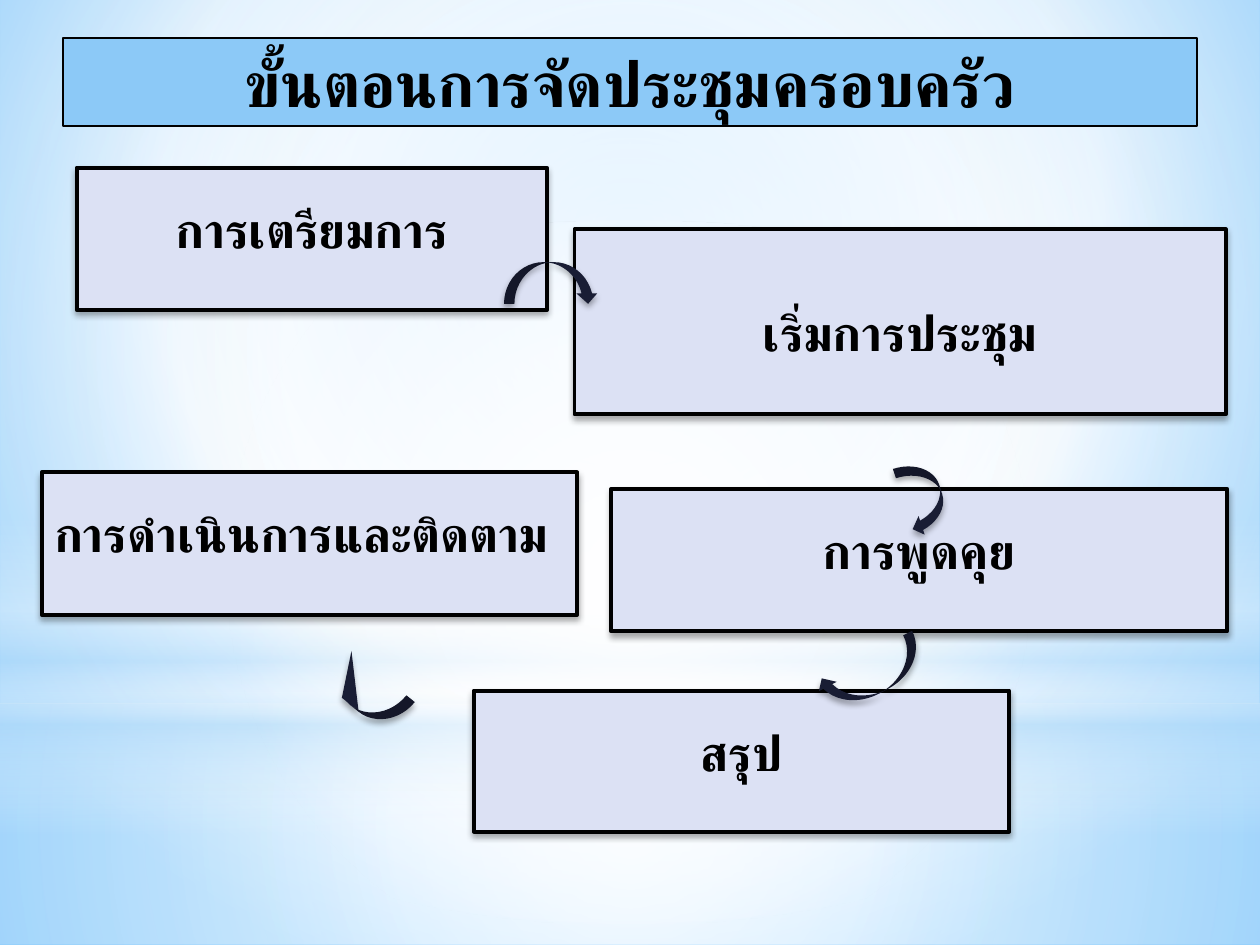
from lxml import etree
from pptx import Presentation
from pptx.dml.color import RGBColor
from pptx.enum.shapes import MSO_SHAPE
from pptx.enum.text import MSO_ANCHOR, PP_ALIGN
from pptx.oxml.ns import qn
from pptx.util import Pt

RECT, OVAL = MSO_SHAPE.RECTANGLE, MSO_SHAPE.OVAL
DOWN, LEFT_ARROW = MSO_SHAPE.CURVED_DOWN_ARROW, MSO_SHAPE.CURVED_LEFT_ARROW
TOP, MIDDLE = MSO_ANCHOR.TOP, MSO_ANCHOR.MIDDLE
CENTER, LEFT = PP_ALIGN.CENTER, PP_ALIGN.LEFT
W, H = 720, 540
LINE = 24
BLACK, WHITE, SKY = "000000", "FFFFFF", "B4DCFA"
TITLE_FILL, STEP_FILL, ARROW_FILL = "8CC9F7", "DCE1F4", "191D34"
MID = (50, 50, 50, 50)

STEPS = [
    ("การเตรียมการ", (43.9, 95.8, 268.6, 81.4), 1, CENTER),
    ("เริ่มการประชุม", (328.3, 131, 372.2, 105.8), 2, CENTER),
    ("การพูดคุย", (349.2, 279.4, 352.1, 81.4), 1, CENTER),
    ("สรุป", (270.7, 394.6, 306, 80.6), 1, CENTER),
    ("การดำเนินการและติดตาม", (23.8, 270, 306, 81.4), 1, LEFT),
]
ARROWS = [
    (DOWN, (288, 149.8, 54, 23.8), 0, None),
    (LEFT_ARROW, (516.2, 263.5, 22.3, 41.8), 341.9, None),
    (LEFT_ARROW, (486.7, 353.5, 23, 64.1), 62.2, None),
    (LEFT_ARROW, (196.6, 367.9, 24.5, 52.6), 128.9, (0.25, 0.5, 0.99)),
]
GLOWS = [
    (RECT, (0, 401.8, W, 138.2),
     [(0, WHITE, 91), (37, WHITE, 76), (100, SKY, 79)], MID),
    (RECT, (0, 0, W, 401.8),
     [(0, WHITE, 89), (48, WHITE, 62), (100, SKY, 79)], MID),
    (RECT, (0, 296.6, W, 180),
     [(0, WHITE, 0), (29, WHITE, 30), (45, SKY, 40), (55, WHITE, 26),
      (65, SKY, 60), (100, WHITE, 0)], None),
    (OVAL, (0, 126, W, 401.8), [(0, WHITE, 100), (56, WHITE, 0)], MID),
]


def rgb(value):
    """Turn a hex string into a colour."""
    return RGBColor.from_string(value)


def add_color(parent, value, opacity):
    """Append a colour with the given opacity in percent."""
    clr = etree.SubElement(parent, qn("a:srgbClr"), val=value)
    if opacity < 100:
        etree.SubElement(clr, qn("a:alpha"), val=str(opacity * 1000))


def set_gradient(props, stops, focus):
    """Swap a solid fill for a circular gradient, or a vertical one without focus."""
    grad = etree.Element(qn("a:gradFill"), rotWithShape="1")
    gs_lst = etree.SubElement(grad, qn("a:gsLst"))
    for pos, value, opacity in stops:
        gs = etree.SubElement(gs_lst, qn("a:gs"), pos=str(pos * 1000))
        add_color(gs, value, opacity)
    if focus:
        circle = etree.SubElement(grad, qn("a:path"), path="circle")
        sides = {k: str(v * 1000) for k, v in zip("ltrb", focus)}
        etree.SubElement(circle, qn("a:fillToRect"), sides)
    else:
        etree.SubElement(grad, qn("a:lin"), ang="5400000", scaled="0")
    props.replace(props.find(qn("a:solidFill")), grad)


def add_box(s, kind, box, fill, line=0, shadow=False):
    """Add a filled shape with an optional black outline and soft shadow."""
    sp = s.shapes.add_shape(kind, *(Pt(v) for v in box))
    sp.fill.solid()
    sp.fill.fore_color.rgb = rgb(fill)
    if line:
        sp.line.color.rgb = rgb(BLACK)
        sp.line.width = Pt(line)
    else:
        sp.line.fill.background()
    sp.shadow.inherit = False
    if shadow:
        effects = sp._element.spPr.find(qn("a:effectLst"))
        outer = etree.SubElement(
            effects, qn("a:outerShdw"), blurRad=str(Pt(3.5)),
            dist=str(Pt(2.2)), dir="5400000", rotWithShape="0")
        add_color(outer, BLACK, 32)
    return sp


def set_text(sp, text, font, size, align, anchor):
    """Write one bold black paragraph into a shape."""
    tf = sp.text_frame
    tf.word_wrap = True
    tf.vertical_anchor = anchor
    tf.text = text
    p = tf.paragraphs[0]
    p.alignment = align
    r = p.runs[0]
    r.font.name = font
    r.font.size = Pt(size)
    r.font.bold = True
    r.font.color.rgb = rgb(BLACK)
    etree.SubElement(r.font._element, qn("a:cs"), typeface=font)
    return p


def add_background(s):
    """Paint the slide background and its layered glows."""
    s.background.fill.solid()
    stops = [(0, "9ED5FF", 100), (60, WHITE, 100), (100, "5BB9FF", 100)]
    set_gradient(s._element.find(".//" + qn("p:bgPr")), stops, (20, 10, 20, 60))
    for kind, box, stops, focus in GLOWS:
        sp = add_box(s, kind, box, WHITE)
        set_gradient(sp._element.spPr, stops, focus)


def add_title(s, text, box):
    """Add the title bar."""
    sp = add_box(s, RECT, box, TITLE_FILL, 1.25)
    set_text(sp, text, "Roboto", 36, CENTER, MIDDLE)


def add_step(s, text, box, lines_above, align):
    """Add a step box whose text starts some lines below the top."""
    sp = add_box(s, RECT, box, STEP_FILL, 2.25, True)
    p = set_text(sp, text, "DejaVu Sans Mono", 28, align, TOP)
    p.line_spacing = Pt(LINE)
    sp.text_frame.margin_top = Pt(3.6 + LINE * lines_above)


def add_arrow(s, kind, box, rotation, adjustments):
    """Add a curved arrow between two steps."""
    sp = add_box(s, kind, box, ARROW_FILL, shadow=True)
    sp.rotation = rotation
    for i, value in enumerate(adjustments or ()):
        sp.adjustments[i] = value


def main():
    """Build and save the slide."""
    prs = Presentation()
    prs.slide_width, prs.slide_height = Pt(W), Pt(H)
    s = prs.slides.add_slide(prs.slide_layouts[6])
    add_background(s)
    add_title(s, "ขั้นตอนการจัดประชุมครอบครัว", (36, 21.6, 648, 50.4))
    for step in STEPS:
        add_step(s, *step)
    for arrow in ARROWS:
        add_arrow(s, *arrow)
    prs.save("out.pptx")


if __name__ == "__main__":
    main()
